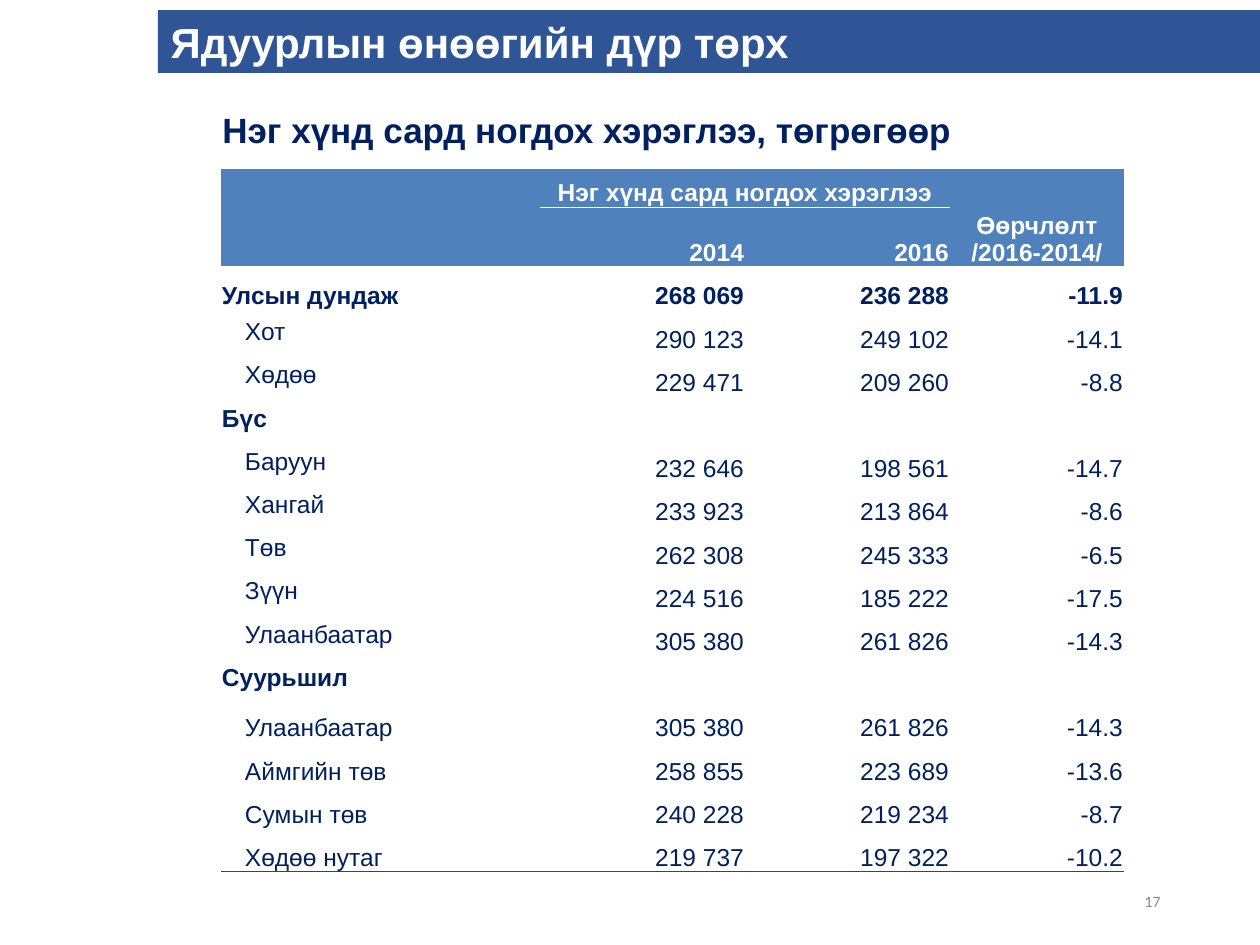
"""Build the slide with the table of monthly consumption per person."""
from lxml.etree import fromstring
from pptx import Presentation
from pptx.dml.color import RGBColor
from pptx.enum.text import MSO_ANCHOR as ANCHOR, MSO_AUTO_SIZE as AUTO, PP_ALIGN as ALIGN
from pptx.util import Emu, Pt

PX = 914400 / 126
NO_STYLE = "{2D5ABB26-0587-4C30-8999-92F81FD0307C}"
NS = "http://schemas.openxmlformats.org/drawingml/2006/main"
COLORS = {"bar": "2F5597", "head": "4F81BD", "white": "FFFFFF",
          "text": "002060", "rule": "1F497D", "number": "898989"}


def px(n):
    return Emu(round(n * PX))


def write(tf, text, color, align=ALIGN.LEFT, name="Arial", size=14, bold=True):
    p = tf.paragraphs[0]
    p.alignment = align
    r = p.add_run()
    r.text = text
    for key, value in {"name": name, "size": Pt(size), "bold": bold}.items():
        setattr(r.font, key, value)
    r.font.color.rgb = RGBColor.from_string(COLORS[color])


prs = Presentation()
prs.slide_width, prs.slide_height = px(1260), px(945)
s = prs.slides.add_slide(prs.slide_layouts[5])

title = s.shapes.title
title.left, title.top, title.width, title.height = px(158), px(10), px(1102), px(63)
title.fill.solid()
title.fill.fore_color.rgb = RGBColor.from_string(COLORS["bar"])
title.text_frame.auto_size = AUTO.NONE
title.text_frame.vertical_anchor = ANCHOR.MIDDLE
write(title.text_frame, "Ядуурлын өнөөгийн дүр төрх", "white", size=24)

texts = [
    ((210, 102, 1071, 55), ANCHOR.TOP,
     {"text": "Нэг хүнд сард ногдох хэрэглээ, төгрөгөөр", "color": "text", "size": 20}),
    ((890, 876, 283, 50), ANCHOR.MIDDLE,
     {"text": "17", "color": "number", "align": ALIGN.RIGHT, "name": "Calibri",
      "size": 9, "bold": False}),
]
for box, anchor, fmt in texts:
    tf = s.shapes.add_textbox(*map(px, box)).text_frame
    tf.word_wrap = True
    tf.vertical_anchor = anchor
    write(tf, **fmt)

rows = [
    ("", "Нэг хүнд сард ногдох хэрэглээ", "", "Өөрчлөлт /2016-2014/"),
    ("", "2014", "2016", ""),
    ("Улсын дундаж", "268 069", "236 288", "-11.9"),
    ("Хот", "290 123", "249 102", "-14.1"),
    ("Хөдөө", "229 471", "209 260", "-8.8"),
    ("Бүс", "", "", ""),
    ("Баруун", "232 646", "198 561", "-14.7"),
    ("Хангай", "233 923", "213 864", "-8.6"),
    ("Төв", "262 308", "245 333", "-6.5"),
    ("Зүүн", "224 516", "185 222", "-17.5"),
    ("Улаанбаатар", "305 380", "261 826", "-14.3"),
    ("Суурьшил", "", "", ""),
    ("Улаанбаатар", "305 380", "261 826", "-14.3"),
    ("Аймгийн төв", "258 855", "223 689", "-13.6"),
    ("Сумын төв", "240 228", "219 234", "-8.7"),
    ("Хөдөө нутаг", "219 737", "197 322", "-10.2"),
]
group_rows = (2, 5, 11)
last = len(rows) - 1

frame = s.shapes.add_table(len(rows), 4, px(221), px(168), px(903), px(683))
table = frame.table
table.first_row = table.horz_banding = False
table._tbl.tblPr.find(f"{{{NS}}}tableStyleId").text = NO_STYLE
for column, width in zip(table.columns, (319, 205, 205, 174)):
    column.width = px(width)
for i, row in enumerate(table.rows):
    row.height = px(39) if i < 2 else px(605) // (len(rows) - 2)
for first, end in (((0, 0), (1, 0)), ((0, 1), (0, 2)), ((0, 3), (1, 3))):
    table.cell(*first).merge(table.cell(*end))

for i, values in enumerate(rows):
    header = i < 2
    bold = header or i in group_rows
    for j, value in enumerate(values):
        cell = table.cell(i, j)
        label = j == 0
        indent = label and not bold
        middle = label and 3 <= i <= 11
        fmt = {"margin_left": px(24 if indent else 1), "margin_right": px(1),
               "margin_top": px(1), "margin_bottom": 0,
               "vertical_anchor": ANCHOR.MIDDLE if middle else ANCHOR.BOTTOM}
        for key, val in fmt.items():
            setattr(cell, key, val)
        cell.fill.solid()
        cell.fill.fore_color.rgb = RGBColor.from_string(COLORS["head" if header else "white"])

        borders = {}
        if header and not cell.is_spanned:
            borders = {"lnT": "white", "lnB": "white"}
        elif i in group_rows:
            borders = {"lnT": "white"}
        elif i == last:
            borders = {"lnB": "rule"}
        for n, (side, color) in enumerate(borders.items()):
            cell._tc.get_or_add_tcPr().insert(n, fromstring(
                f'<a:{side} xmlns:a="{NS}" w="6350"><a:solidFill>'
                f'<a:srgbClr val="{COLORS[color]}"/></a:solidFill></a:{side}>'))

        if value:
            align = ALIGN.LEFT if label else ALIGN.CENTER if i == 0 else ALIGN.RIGHT
            write(cell.text_frame, value, "white" if header else "text", align, bold=bold)

prs.save("out.pptx")
